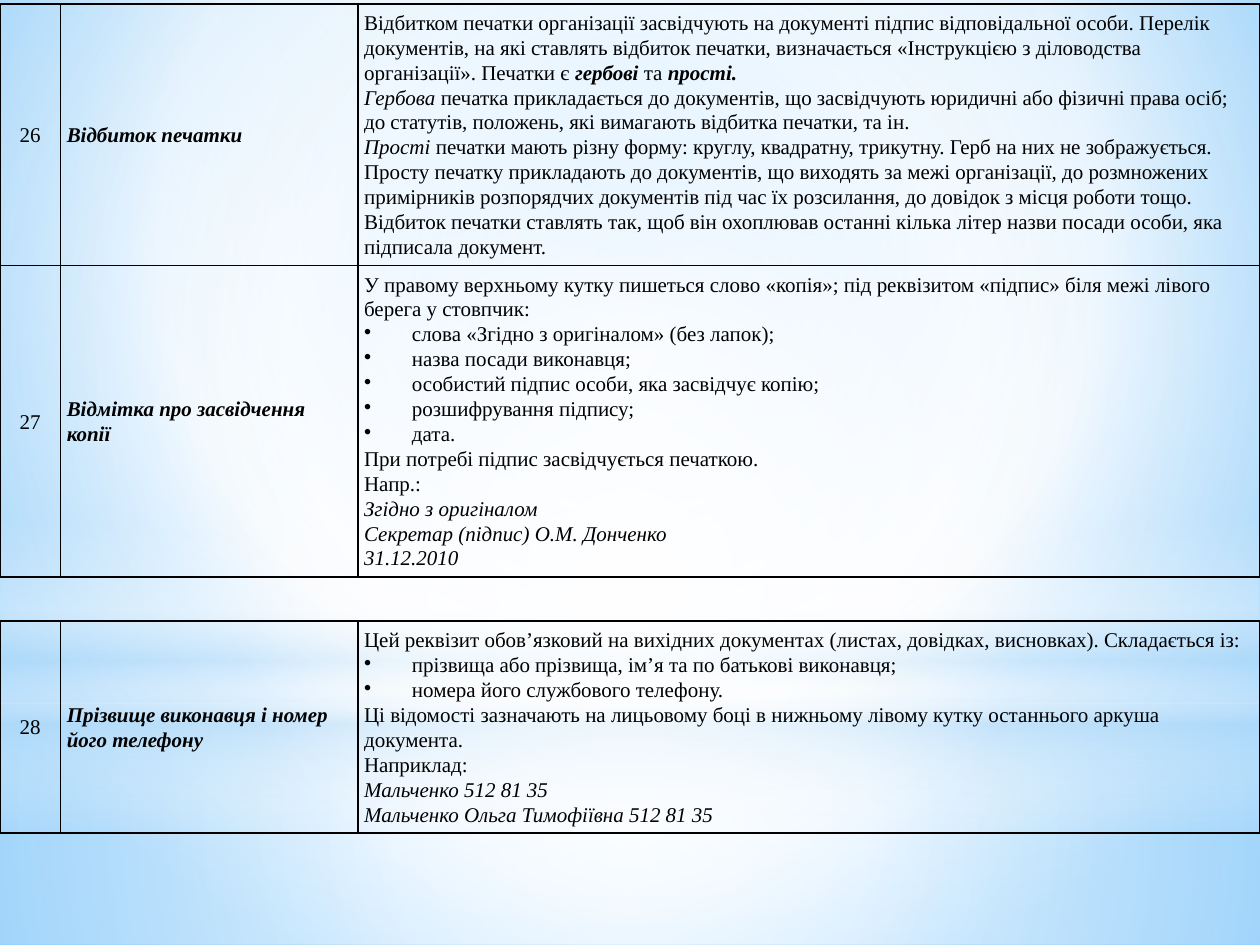
from lxml.etree import SubElement
from pptx import Presentation
from pptx.dml.color import RGBColor
from pptx.enum.shapes import MSO_SHAPE
from pptx.enum.text import MSO_ANCHOR, PP_ALIGN
from pptx.oxml.ns import qn
from pptx.util import Inches, Pt

FONT, INK = "Times New Roman", "000000"
WHITE, SKY = "FFFFFF", "B4DCFA"
COLS = (0.48, 2.36, 7.16)
MID = (50, 50, 50, 50)


def color(code):
    """Turn a hex string into a colour."""
    return RGBColor.from_string(code)


def plain(text):
    """Describe an upright paragraph."""
    return [(text, "")], False


def slant(text):
    """Describe an italic paragraph."""
    return [(text, "i")], False


def item(text):
    """Describe a bulleted paragraph."""
    return [(text, "")], True


def mixed(*runs):
    """Describe a paragraph of differently styled runs."""
    return runs, False


SEAL = [
    mixed(("Відбитком печатки організації засвідчують на документі підпис відповідальної особи. "
           "Перелік документів, на які ставлять відбиток печатки, визначається «Інструкцією з "
           "діловодства організації». Печатки є ", ""),
          ("гербові ", "bi"), ("та ", ""), ("прості.", "bi")),
    mixed(("Гербова ", "i"),
          ("печатка прикладається до документів, що засвідчують юридичні або фізичні права осіб; "
           "до статутів, положень, які вимагають відбитка печатки, та ін.", "")),
    mixed(("Прості ", "i"),
          ("печатки мають різну форму: круглу, квадратну, трикутну. Герб на них не зображується. "
           "Просту печатку прикладають до документів, що виходять за межі організації, до "
           "розмножених примірників розпорядчих документів під час їх розсилання, до довідок з "
           "місця роботи тощо.", "")),
    plain("Відбиток печатки ставлять так, щоб він охоплював останні кілька літер назви посади "
          "особи, яка підписала документ."),
]
COPY = [
    plain("У правому верхньому кутку пишеться слово «копія»; під реквізитом «підпис» біля межі "
          "лівого берега у стовпчик:"),
    item("слова «Згідно з оригіналом» (без лапок);"),
    item("назва посади виконавця;"),
    item("особистий підпис особи, яка засвідчує копію;"),
    item("розшифрування підпису;"),
    item("дата."),
    plain("При потребі підпис засвідчується печаткою."),
    plain("Напр.:"),
    slant("Згідно з оригіналом"),
    slant("Секретар (підпис) О.М. Донченко"),
    slant("31.12.2010"),
]
PHONE = [
    plain("Цей реквізит обов’язковий на вихідних документах (листах, довідках, висновках). "
          "Складається із:"),
    item("прізвища або прізвища, ім’я та по батькові виконавця;"),
    item("номера його службового телефону."),
    plain("Ці відомості зазначають на лицьовому боці в нижньому лівому кутку останнього аркуша "
          "документа."),
    plain("Наприклад:"),
    slant("Мальченко 512 81 35"),
    slant("Мальченко Ольга Тимофіївна 512 81 35"),
]
UPPER = [("26", "Відбиток печатки", SEAL, 2.07),
         ("27", "Відмітка про засвідчення копії", COPY, 2.47)]
LOWER = [("28", "Прізвище виконавця і номер його телефону", PHONE, 1.68)]


def blend(fill, root, stops, focus=None):
    """Fill with stops of place, colour and opacity, round a focus or downwards."""
    fill.gradient()
    grad = root.find(".//" + qn("a:gradFill"))
    for part in list(grad):
        grad.remove(part)
    group = SubElement(grad, qn("a:gsLst"))
    for place, code, alpha in stops:
        stop = SubElement(group, qn("a:gs"), pos=str(place * 1000))
        tint = SubElement(stop, qn("a:srgbClr"), val=code)
        SubElement(tint, qn("a:alpha"), val=str(alpha * 1000))
    if focus:
        route = SubElement(grad, qn("a:path"), {"path": "circle"})
        sides = {side: str(part * 1000) for side, part in zip("ltrb", focus)}
        SubElement(route, qn("a:fillToRect"), sides)
    else:
        SubElement(grad, qn("a:lin"), ang="5400000", scaled="0")


def glow(slide, kind, top, height, stops, focus=None):
    """Lay a full-width translucent shape."""
    shape = slide.shapes.add_shape(kind, 0, Inches(top), Inches(10), Inches(height))
    shape.shadow.inherit = False
    shape.line.fill.background()
    blend(shape.fill, shape.element, stops, focus)


def edge(cell):
    """Draw a black border round a cell."""
    props = cell._tc.get_or_add_tcPr()
    for side in ("lnL", "lnR", "lnT", "lnB"):
        line = SubElement(props, qn("a:" + side), w=str(Pt(1)))
        SubElement(SubElement(line, qn("a:solidFill")), qn("a:srgbClr"), val=INK)


def write(cell, lines, align=PP_ALIGN.LEFT):
    """Write described paragraphs into a cell."""
    frame = cell.text_frame
    for index, (runs, bullet) in enumerate(lines):
        para = frame.add_paragraph() if index else frame.paragraphs[0]
        para.alignment, para.line_spacing = align, 1.07
        if bullet:
            props = para._p.get_or_add_pPr()
            props.set("marL", str(Inches(0.38)))
            props.set("indent", str(Inches(-0.38)))
            SubElement(props, qn("a:buChar"), char="•")
        for text, style in runs:
            run = para.add_run()
            run.text = text
            font = run.font
            font.name, font.size = FONT, Pt(12)
            font.bold, font.italic = "b" in style, "i" in style
            font.color.rgb = color(INK)


def grid(slide, top, rows):
    """Add a bordered table of numbered requisites."""
    total = sum(row[-1] for row in rows)
    table = slide.shapes.add_table(len(rows), len(COLS), 0, Inches(top),
                                   Inches(10), Inches(total)).table
    table.first_row = table.horz_banding = False
    for col, width in zip(table.columns, COLS):
        col.width = Inches(width)
    for row, (number, name, lines, height) in zip(table.rows, rows):
        row.height = Inches(height)
        for cell in row.cells:
            edge(cell)
            cell.fill.background()
            cell.margin_left = cell.margin_right = Inches(0.05)
            cell.margin_top = cell.margin_bottom = Inches(0.05)
            cell.vertical_anchor = MSO_ANCHOR.MIDDLE
        first, second, third = row.cells
        third.vertical_anchor = MSO_ANCHOR.TOP
        write(first, [plain(number)], PP_ALIGN.CENTER)
        write(second, [mixed((name, "bi"))])
        write(third, lines)


def main():
    """Build and save the slide."""
    deck = Presentation()
    deck.slide_width, deck.slide_height = Inches(10), Inches(7.5)
    slide = deck.slides.add_slide(deck.slide_layouts[6])
    blend(slide.background.fill, slide.element,
          [(0, "9ED5FF", 100), (60, WHITE, 100), (100, "5BB9FF", 100)], (20, 10, 20, 60))
    box, oval = MSO_SHAPE.RECTANGLE, MSO_SHAPE.OVAL
    glow(slide, box, 5.58, 1.92, [(0, WHITE, 91), (37, WHITE, 76), (100, SKY, 79)], MID)
    glow(slide, box, 0, 5.58, [(0, WHITE, 89), (48, WHITE, 62), (100, SKY, 79)], MID)
    glow(slide, box, 4.12, 2.5, [(0, WHITE, 0), (29, WHITE, 30), (45, SKY, 40),
                                 (55, WHITE, 26), (65, SKY, 60), (100, WHITE, 0)])
    glow(slide, oval, 1.75, 5.58, [(0, WHITE, 100), (56, WHITE, 0)], MID)
    grid(slide, 0.03, UPPER)
    grid(slide, 4.93, LOWER)
    deck.save("out.pptx")


if __name__ == "__main__":
    main()
